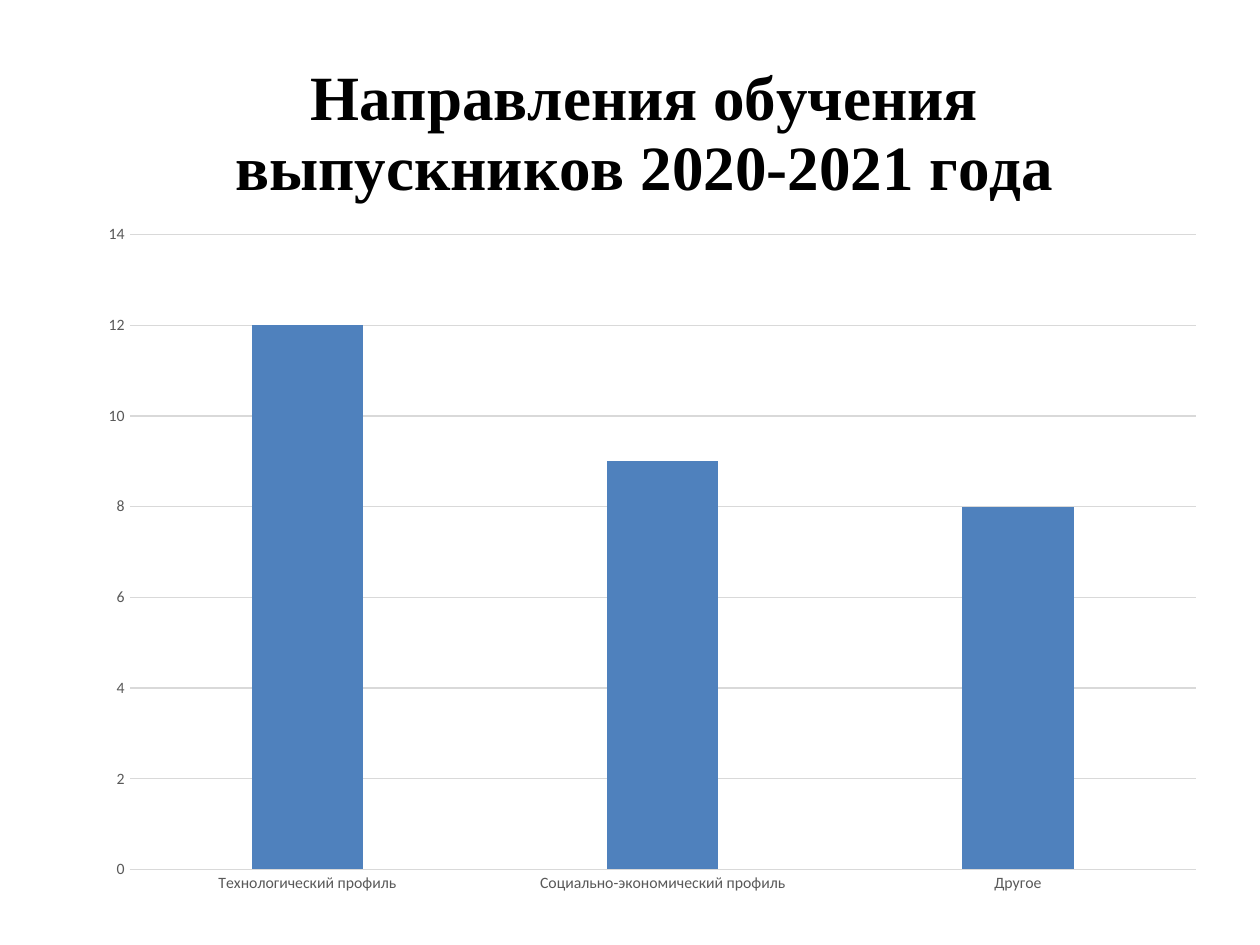
from lxml import etree
from pptx import Presentation
from pptx.chart import data as cd
from pptx.dml.color import RGBColor
from pptx.enum import chart as ce
from pptx.util import Cm, Pt

HEAD = ["Направления обучения", "выпускников 2020-2021 года"]
BARS = {
    "Технологический профиль": 12,
    "Социально-экономический профиль": 9,
    "Другое": 8,
}
HUES = {"bar": "4F81BD", "grid": "D9D9D9", "label": "595959", "title": "000000"}
FONTS = {
    "title": {"name": "Times New Roman", "size": Pt(36), "bold": True},
    "label": {"name": "Calibri", "size": Pt(9), "bold": False},
}
SPOTS = {
    "title": {"xMode": "edge", "yMode": "edge", "x": 0.13, "y": 0.03},
    "plot": {"layoutTarget": "inner", "xMode": "edge", "yMode": "edge",
             "x": 0.04, "y": 0.23, "w": 0.94, "h": 0.72},
}


def hue(key):
    return RGBColor.from_string(HUES[key])


def style(font, key):
    for name, value in FONTS[key].items():
        setattr(font, name, value)
    font.color.rgb = hue(key)


def rule(line):
    line.color.rgb = hue("grid")
    line.width = Pt(0.75)


def place(node, key):
    ns = "{%s}" % node.nsmap["c"]
    for old in node.findall(ns + "layout"):
        node.remove(old)
    box = etree.Element(ns + "layout")
    spot = etree.SubElement(box, ns + "manualLayout")
    for name, value in SPOTS[key].items():
        etree.SubElement(spot, ns + name, val=str(value))
    text = node.find(ns + "tx")
    node.insert(0 if text is None else 1, box)


def main():
    deck = Presentation()
    deck.slide_width, deck.slide_height = Cm(25.4), Cm(19.05)
    slide = deck.slides.add_slide(deck.slide_layouts[6])

    data = cd.CategoryChartData()
    data.categories = list(BARS)
    data.add_series("Series 1", list(BARS.values()))
    chart = slide.shapes.add_chart(
        ce.XL_CHART_TYPE.COLUMN_CLUSTERED,
        Cm(1.7), Cm(0.64), Cm(22.86), Cm(17.78), data).chart
    chart.has_legend = False
    style(chart.font, "label")

    title = chart.chart_title
    frame = title.text_frame
    frame.text = "\n".join(HEAD)
    for para in frame.paragraphs:
        style(para.font, "title")
        for run in para.runs:
            style(run.font, "title")
    title.include_in_layout = False

    plot = chart.plots[0]
    for name, value in {"gap_width": 219, "overlap": -27,
                        "vary_by_categories": False}.items():
        setattr(plot, name, value)
    fill = plot.series[0].format.fill
    fill.solid()
    fill.fore_color.rgb = hue("bar")

    cat, val = chart.category_axis, chart.value_axis
    for axis in (cat, val):
        axis.major_tick_mark = axis.minor_tick_mark = ce.XL_TICK_MARK.NONE
        style(axis.tick_labels.font, "label")
    rule(cat.format.line)
    rule(val.major_gridlines.format.line)
    val.format.line.fill.background()
    for name, value in {"minimum_scale": 0, "maximum_scale": 14,
                        "major_unit": 2}.items():
        setattr(val, name, value)

    place(title._element, "title")
    place(chart._chartSpace.chart.plotArea, "plot")
    deck.save("out.pptx")


if __name__ == "__main__":
    main()
